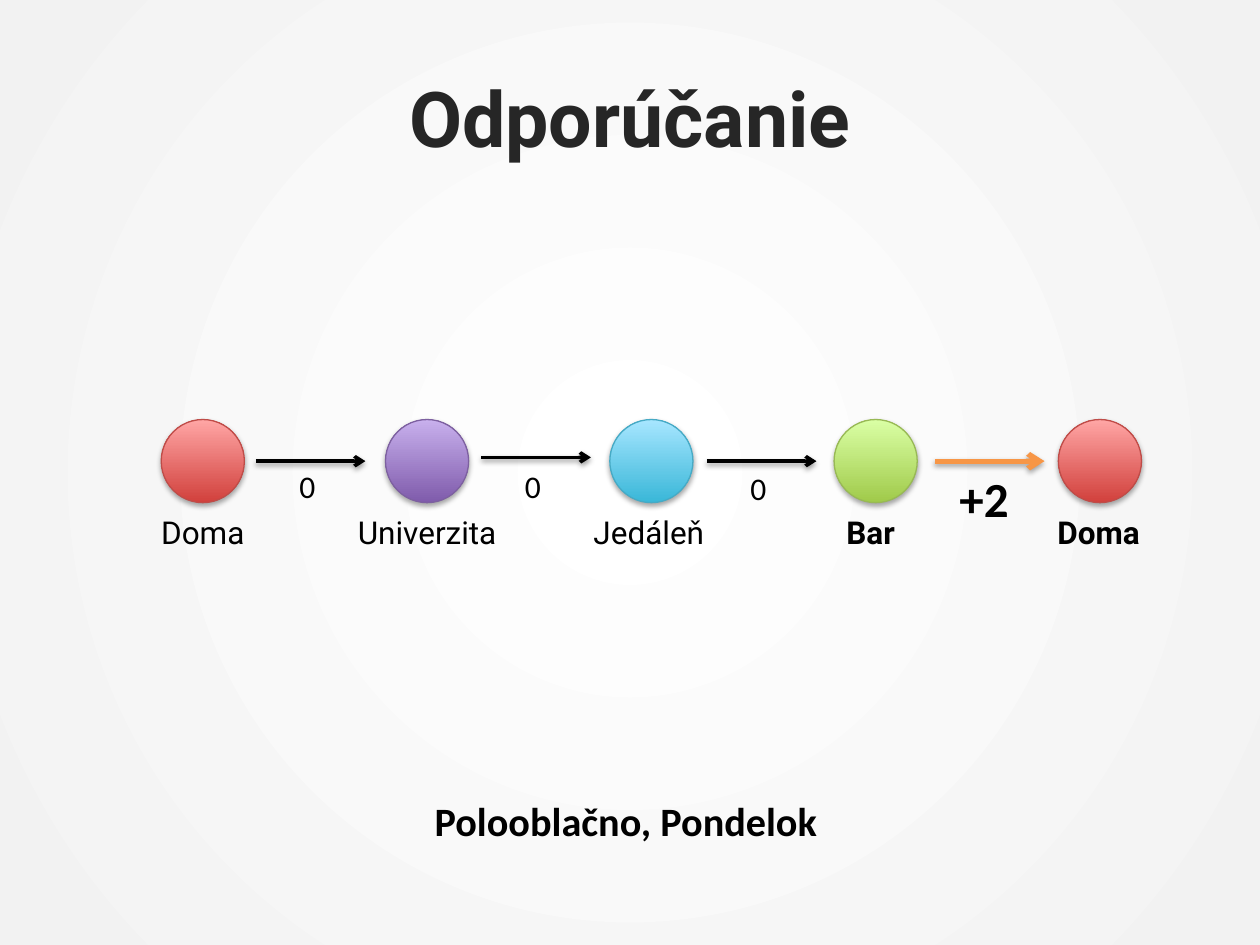
import pptx
import pptx.dml.color
import pptx.enum.shapes
import pptx.enum.text
import pptx.oxml
import pptx.oxml.ns
import pptx.util

Inches, Pt = pptx.util.Inches, pptx.util.Pt
RGBColor = pptx.dml.color.RGBColor
MSO_ANCHOR = pptx.enum.text.MSO_ANCHOR
NS = pptx.oxml.ns.nsdecls("a")

BLACK = RGBColor(0x00, 0x00, 0x00)
DARK = RGBColor(0x26, 0x26, 0x26)
ORANGE = RGBColor(0xF7, 0x96, 0x46)
WHITE = RGBColor(0xFF, 0xFF, 0xFF)
PALE_GREY = RGBColor(0xF2, 0xF2, 0xF2)
# Each palette: bottom of gradient, top of gradient, outline
RED = RGBColor(0xD1, 0x40, 0x3C), RGBColor(0xFF, 0xA6, 0xA5), RGBColor(0xBF, 0x4C, 0x48)
PURPLE = RGBColor(0x7F, 0x5B, 0xAB), RGBColor(0xC8, 0xB0, 0xED), RGBColor(0x7D, 0x60, 0xA0)
BLUE = RGBColor(0x39, 0xB7, 0xD8), RGBColor(0xA7, 0xE6, 0xFF), RGBColor(0x46, 0xAA, 0xC5)
GREEN = RGBColor(0xA0, 0xCA, 0x4A), RGBColor(0xDA, 0xFF, 0xA5), RGBColor(0x98, 0xB9, 0x55)

TITLE = "Odporúčanie"
CONDITIONS = "Polooblačno, Pondelok"
# Place, palette, bold, label centre
PLACES = [
    ("Doma", RED, False, 1.61),
    ("Univerzita", PURPLE, False, 3.39),
    ("Jedáleň", BLUE, False, 5.15),
    ("Bar", GREEN, True, 6.91),
    ("Doma", RED, True, 8.72),
]
# Score, arrow left, arrow y, label centre, label top, strong
STEPS = [
    ("0", 2.03, 3.66, 2.44, 3.66, False),
    ("0", 3.82, 3.63, 4.23, 3.66, False),
    ("0", 5.61, 3.66, 6.02, 3.67, False),
    ("+2", 7.42, 3.66, 7.81, 3.67, True),
]
FIRST_X, PITCH, CIRCLE_Y, DIAMETER = 1.28, 1.78, 3.33, 0.66
ARROW_LENGTH = 0.87
LABEL_Y, LABEL_W, LABEL_H = 4.02, 1.4, 0.4


def add_text(slide, text, x, y, w, h, font="Roboto", size=18, color=BLACK,
             bold=False, anchor=MSO_ANCHOR.TOP):
    """Add one centred line of text."""
    tf = slide.shapes.add_textbox(Inches(x), Inches(y), Inches(w), Inches(h)).text_frame
    tf.word_wrap = True
    tf.vertical_anchor = anchor
    p = tf.paragraphs[0]
    p.alignment = pptx.enum.text.PP_ALIGN.CENTER
    r = p.add_run()
    r.text = text
    r.font.name, r.font.size, r.font.bold = font, Pt(size), bold
    r.font.color.rgb = color


def add_shadow(sp, alpha=35, distance=1.8):
    sp._element.spPr.append(pptx.oxml.parse_xml(
        f'<a:effectLst {NS}><a:outerShdw blurRad="{Pt(3.1)}" dist="{Pt(distance)}" '
        f'dir="5400000" rotWithShape="0"><a:srgbClr val="{BLACK}">'
        f'<a:alpha val="{alpha * 1000}"/></a:srgbClr></a:outerShdw></a:effectLst>'))


def set_gradient(fill, first, last):
    fill.gradient()
    for stop, color in zip(fill.gradient_stops, (first, last)):
        stop.color.rgb = color


def set_background(slide):
    """Fill the slide with a gradient that spreads from its centre."""
    fill = slide.background.fill
    set_gradient(fill, WHITE, PALE_GREY)
    lin = slide.background._cSld.find(".//" + pptx.oxml.ns.qn("a:lin"))
    lin.getparent().replace(lin, pptx.oxml.parse_xml(
        f'<a:path {NS} path="circle">'
        '<a:fillToRect l="50000" t="50000" r="50000" b="50000"/></a:path>'))


def add_circle(slide, x, palette):
    bottom, top, outline = palette
    sp = slide.shapes.add_shape(
        pptx.enum.shapes.MSO_SHAPE.OVAL,
        Inches(x), Inches(CIRCLE_Y), Inches(DIAMETER), Inches(DIAMETER))
    set_gradient(sp.fill, bottom, top)
    sp.fill.gradient_angle = 90
    sp.line.color.rgb = outline
    sp.line.width = Pt(0.75)
    add_shadow(sp)


def add_arrow(slide, x, y, strong):
    line = slide.shapes.add_connector(
        pptx.enum.shapes.MSO_CONNECTOR.STRAIGHT,
        Inches(x), Inches(y), Inches(x + ARROW_LENGTH), Inches(y))
    line.line.color.rgb = ORANGE if strong else BLACK
    line.line.width = Pt(3 if strong else 2)
    line.line._get_or_add_ln().append(
        pptx.oxml.parse_xml(f'<a:tailEnd {NS} type="arrow"/>'))
    if strong:
        add_shadow(line)
    else:
        add_shadow(line, alpha=38, distance=1.6)


def main():
    prs = pptx.Presentation()
    prs.slide_width, prs.slide_height = Inches(10), Inches(7.5)
    slide = prs.slides.add_slide(prs.slide_layouts[6])
    set_background(slide)

    add_text(slide, TITLE, 0.5, 0.3, 9, 1.25, size=44, color=DARK, bold=True,
             anchor=MSO_ANCHOR.MIDDLE)
    add_text(slide, CONDITIONS, 3.22, 6.27, 3.5, 0.49, font="Calibri", size=23, bold=True)

    for i, (name, palette, bold, center) in enumerate(PLACES):
        add_circle(slide, FIRST_X + i * PITCH, palette)
        add_text(slide, name, center - LABEL_W / 2, LABEL_Y, LABEL_W, LABEL_H, bold=bold)

    for score, x, y, center, top, strong in STEPS:
        add_arrow(slide, x, y, strong)
        w, h, size = (0.7, 0.57, 28) if strong else (0.34, 0.4, 18)
        add_text(slide, score, center - w / 2, top, w, h, font="Calibri",
                 size=size, bold=strong)

    prs.save("out.pptx")


if __name__ == "__main__":
    main()
